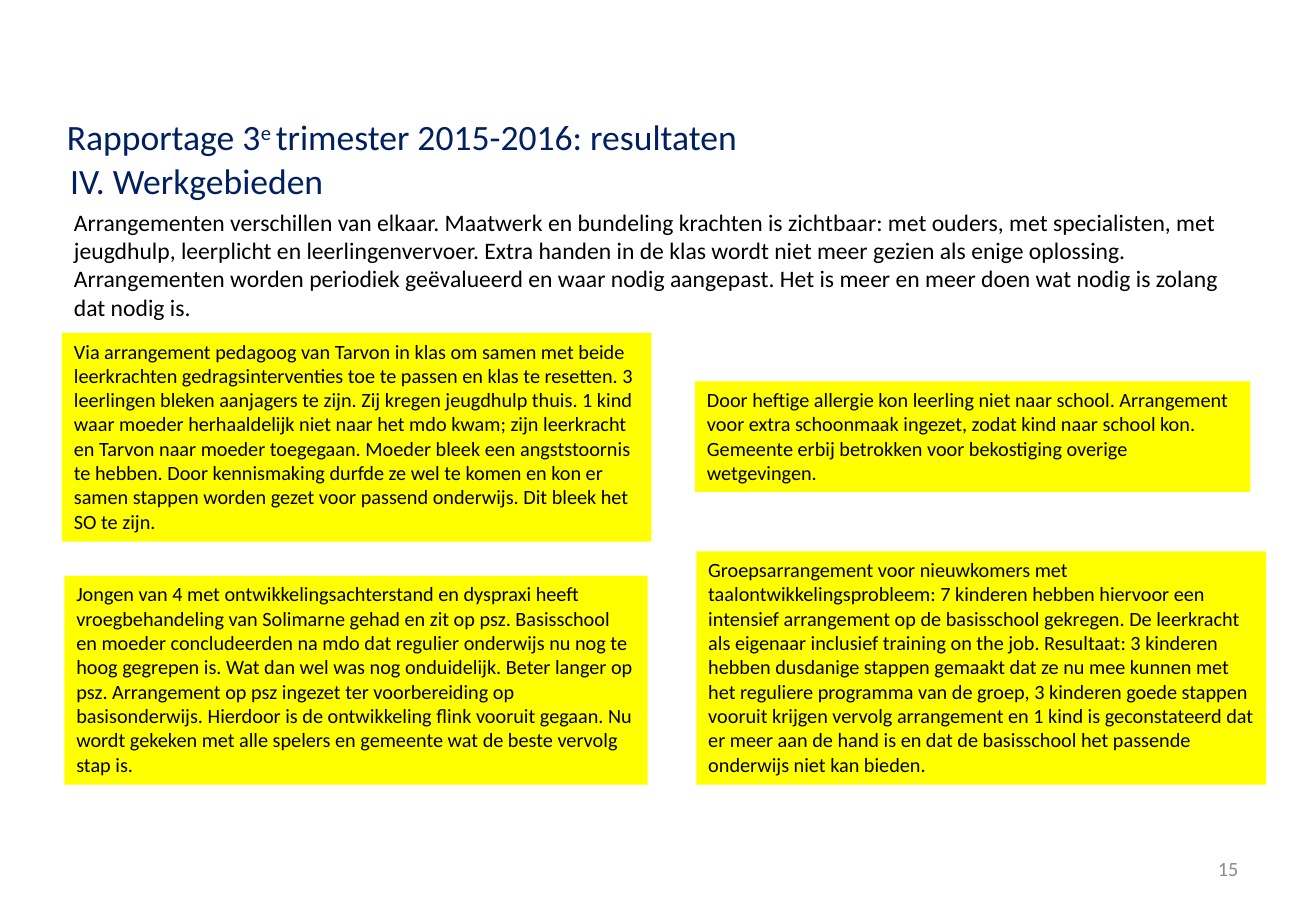
from pptx import Presentation
from pptx import util as u
from pptx.dml.color import RGBColor
from pptx.enum import text

PX = 9144
NAVY = RGBColor(0x00, 0x20, 0x60)
BLACK = RGBColor(0x00, 0x00, 0x00)
YELLOW = RGBColor(0xFF, 0xFF, 0x00)
GREY = RGBColor(0x8C, 0x8C, 0x8C)

deck = Presentation()
deck.slide_width = u.Emu(1083 * PX)
deck.slide_height = u.Emu(750 * PX)
slide = deck.slides.add_slide(deck.slide_layouts[5])


def write(words, place, holder=None, size=12, color=BLACK, fill=None, raised=(),
          align=text.PP_ALIGN.LEFT, anchor=text.MSO_ANCHOR.TOP,
          fit=text.MSO_AUTO_SIZE.SHAPE_TO_FIT_TEXT):
    left, top, width, height = [u.Emu(length * PX) for length in place]
    if holder is None:
        holder = slide.shapes.add_textbox(left, top, width, height)
    holder.left, holder.top, holder.width, holder.height = left, top, width, height
    if fill is not None:
        holder.fill.solid()
        holder.fill.fore_color.rgb = fill
    frame = holder.text_frame
    frame.word_wrap = True
    frame.auto_size = fit
    frame.vertical_anchor = anchor
    paragraph = frame.paragraphs[0]
    paragraph.alignment = align
    for part in words:
        run = paragraph.add_run()
        run.text = part
        run.font.name = "Calibri"
        run.font.size = u.Pt(size)
        run.font.color.rgb = color
        if part in raised:
            run.font._element.set("baseline", "30000")


write(["Rapportage 3", "e ", "trimester 2015-2016: resultaten"], (45, 90, 795, 46),
      holder=slide.shapes.title, size=21.1, color=NAVY, raised=["e "])
write(["IV. Werkgebieden"], (48, 126, 643, 46), size=21.1, color=NAVY)
write(["Arrangementen verschillen van elkaar. Maatwerk en bundeling krachten is zichtbaar: "
       "met ouders, met specialisten, met jeugdhulp, leerplicht en leerlingenvervoer. "
       "Extra handen in de klas wordt niet meer gezien als enige oplossing. "
       "Arrangementen worden periodiek geëvalueerd en waar nodig aangepast. "
       "Het is meer en meer doen wat nodig is zolang dat nodig is."],
      (51, 166, 979, 104), size=14)

cases = [
    ((572, 314, 457, 91),
     "Door heftige allergie kon leerling niet naar school. Arrangement voor extra schoonmaak "
     "ingezet, zodat kind naar school kon. Gemeente erbij betrokken voor bekostiging overige "
     "wetgevingen."),
    ((51, 274, 485, 172),
     "Via arrangement pedagoog van Tarvon in klas om samen met beide leerkrachten "
     "gedragsinterventies toe te passen en klas te resetten. 3 leerlingen bleken aanjagers te "
     "zijn. Zij kregen jeugdhulp thuis. 1 kind waar moeder herhaaldelijk niet naar het mdo "
     "kwam; zijn leerkracht en Tarvon naar moeder toegegaan. Moeder bleek een angststoornis te "
     "hebben. Door kennismaking durfde ze wel te komen en kon er samen stappen worden gezet "
     "voor passend onderwijs. Dit bleek het SO te zijn."),
    ((53, 474, 480, 172),
     "Jongen van 4 met ontwikkelingsachterstand en dyspraxi heeft vroegbehandeling van "
     "Solimarne gehad en zit op psz. Basisschool en moeder concludeerden na mdo dat regulier "
     "onderwijs nu nog te hoog gegrepen is. Wat dan wel was nog onduidelijk. Beter langer op "
     "psz. Arrangement op psz ingezet ter voorbereiding op basisonderwijs. Hierdoor is de "
     "ontwikkeling flink vooruit gegaan. Nu wordt gekeken met alle spelers en gemeente wat de "
     "beste vervolg stap is."),
    ((573, 454, 469, 192),
     "Groepsarrangement voor nieuwkomers met taalontwikkelingsprobleem: 7 kinderen hebben "
     "hiervoor een intensief arrangement op de basisschool gekregen. De leerkracht als "
     "eigenaar inclusief training on the job. Resultaat: 3 kinderen hebben dusdanige stappen "
     "gemaakt dat ze nu mee kunnen met het reguliere programma van de groep, 3 kinderen goede "
     "stappen vooruit krijgen vervolg arrangement en 1 kind is geconstateerd dat er meer aan "
     "de hand is en dat de basisschool het passende onderwijs niet kan bieden."),
]
for place, story in cases:
    write([story], place, fill=YELLOW)

write(["15"], (776, 695, 253, 40), color=GREY, align=text.PP_ALIGN.RIGHT,
      anchor=text.MSO_ANCHOR.MIDDLE, fit=text.MSO_AUTO_SIZE.NONE)

deck.save("out.pptx")
